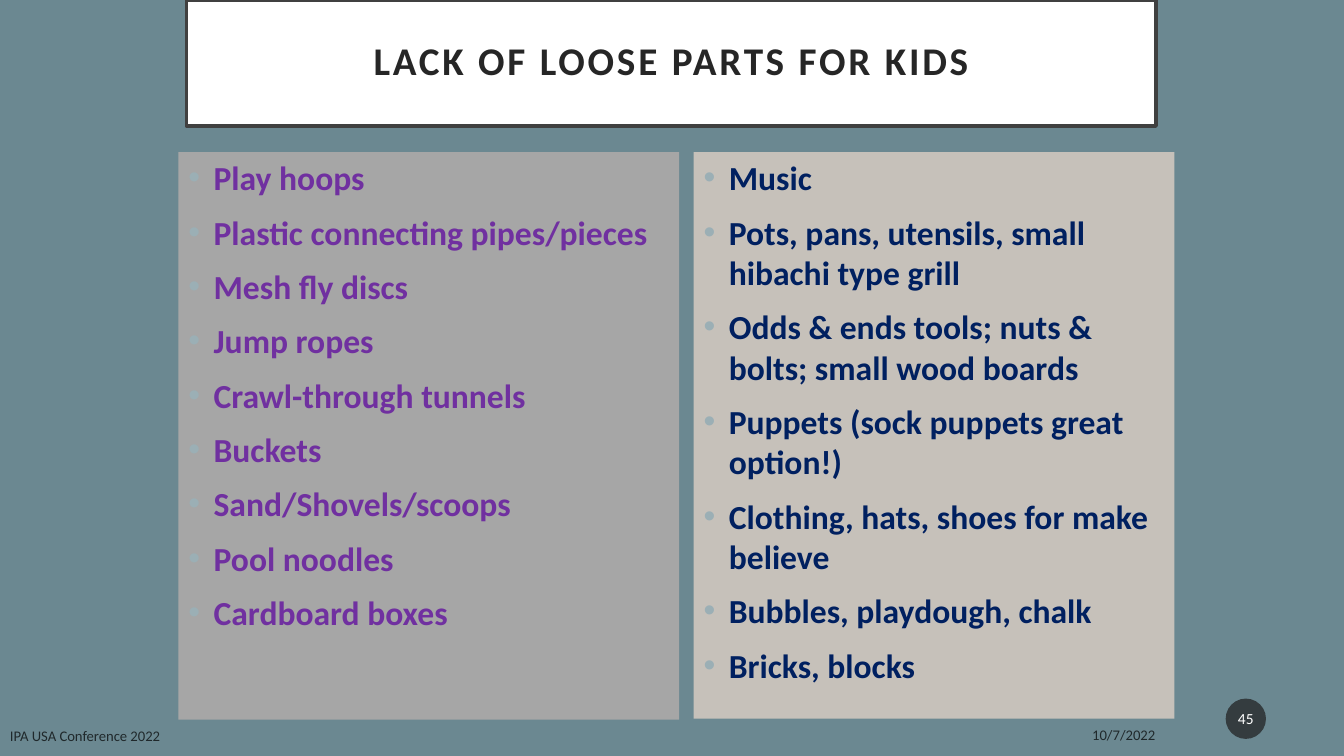
from dataclasses import dataclass

import lxml.etree
import pptx
import pptx.dml.color
import pptx.dml.fill
import pptx.enum.shapes
import pptx.enum.text
import pptx.oxml.ns
import pptx.shapes.base
import pptx.slide
import pptx.text.text
import pptx.util

ALIGN = pptx.enum.text.PP_ALIGN
MIDDLE = pptx.enum.text.MSO_ANCHOR.MIDDLE
qn = pptx.oxml.ns.qn


@dataclass(frozen=True)
class Box:
    left: float
    top: float
    width: float
    height: float

    def lengths(self) -> list[int]:
        return [pptx.util.Pt(v) for v in (self.left, self.top, self.width, self.height)]


@dataclass(frozen=True)
class ToyList:
    box: Box
    fill: str
    color: str
    items: tuple[str, ...]


@dataclass(frozen=True)
class FooterLabel:
    box: Box
    text: str
    alignment: ALIGN


TOY_LISTS = (
    ToyList(
        Box(127.4, 108.7, 357.8, 405.4), "A6A6A6", "7030A0",
        ("Play hoops", "Plastic connecting pipes/pieces", "Mesh fly discs",
         "Jump ropes", "Crawl-through tunnels", "Buckets",
         "Sand/Shovels/scoops", "Pool noodles", "Cardboard boxes"),
    ),
    ToyList(
        Box(495.4, 108.7, 343.4, 404.6), "C6C1BA", "002060",
        ("Music", "Pots, pans, utensils, small hibachi type grill",
         "Odds & ends tools; nuts & bolts; small wood boards",
         "Puppets (sock puppets great option!)",
         "Clothing, hats, shoes for make believe",
         "Bubbles, playdough, chalk", "Bricks, blocks"),
    ),
)

FOOTER_LABELS = (
    FooterLabel(Box(615.6, 511.9, 216.7, 25.2), "10/7/2022", ALIGN.RIGHT),
    FooterLabel(Box(0, 512.6, 464.4, 25.2), "IPA USA Conference 2022", ALIGN.LEFT),
)


def paint(fill: pptx.dml.fill.FillFormat, color: str) -> None:
    fill.solid()
    fill.fore_color.rgb = pptx.dml.color.RGBColor.from_string(color)


def set_opacity(element: lxml.etree._Element, percent: int) -> None:
    """Apply one opacity to every colour inside the element."""
    for color in element.iter(qn("a:srgbClr")):
        lxml.etree.SubElement(color, qn("a:alpha"), val=str(percent * 1000))


def place(shape: pptx.shapes.base.BaseShape, box: Box) -> None:
    shape.left, shape.top, shape.width, shape.height = box.lengths()


def style(paragraph: pptx.text.text._Paragraph, size: float, color: str,
          bold: bool = False) -> None:
    font = paragraph.font
    font.name = "Calibri"
    font.size = pptx.util.Pt(size)
    font.bold = bold
    paint(font.fill, color)


def add_bullet(paragraph: pptx.text.text._Paragraph) -> None:
    properties = paragraph._p.get_or_add_pPr()
    properties.set("marL", str(pptx.util.Pt(18)))
    properties.set("indent", str(pptx.util.Pt(-18)))
    bullet_color = lxml.etree.SubElement(properties, qn("a:buClr"))
    lxml.etree.SubElement(bullet_color, qn("a:srgbClr"), val="9BAFB5")
    lxml.etree.SubElement(properties, qn("a:buFont"), typeface="Arial")
    lxml.etree.SubElement(properties, qn("a:buChar"), char="•")


def fill_title(slide: pptx.slide.Slide) -> None:
    title = slide.shapes.title
    place(title, Box(133.2, 0, 692.6, 90))
    paint(title.fill, "FFFFFF")
    paint(title.line.fill, "404040")
    title.line.width = pptx.util.Pt(2.5)
    frame = title.text_frame
    frame.text = "LACK OF LOOSE PARTS FOR KIDS"
    frame.auto_size = pptx.enum.text.MSO_AUTO_SIZE.NONE
    frame.vertical_anchor = MIDDLE
    frame.margin_left = frame.margin_right = pptx.util.Pt(14.4)
    frame.margin_top = frame.margin_bottom = pptx.util.Pt(14.4)
    paragraph = frame.paragraphs[0]
    paragraph.alignment = ALIGN.CENTER
    paragraph.line_spacing = 0.9
    style(paragraph, 28, "262626", bold=True)
    paragraph._p.pPr.find(qn("a:defRPr")).set("spc", "200")


def fill_toy_list(shape: pptx.shapes.base.BaseShape, toys: ToyList) -> None:
    place(shape, toys.box)
    paint(shape.fill, toys.fill)
    frame = shape.text_frame
    frame.text = "\n".join(toys.items)
    frame.auto_size = pptx.enum.text.MSO_AUTO_SIZE.NONE
    for index, paragraph in enumerate(frame.paragraphs):
        paragraph.space_before = pptx.util.Pt(10 if index else 0)
        add_bullet(paragraph)
        style(paragraph, 24, toys.color, bold=True)


def add_footer_label(slide: pptx.slide.Slide, label: FooterLabel) -> None:
    text_box = slide.shapes.add_textbox(*label.box.lengths())
    frame = text_box.text_frame
    frame.word_wrap = True
    frame.vertical_anchor = MIDDLE
    frame.text = label.text
    paragraph = frame.paragraphs[0]
    paragraph.alignment = label.alignment
    style(paragraph, 10.5, "000000")
    set_opacity(paragraph._p, 70)


def add_page_number(slide: pptx.slide.Slide) -> None:
    badge = slide.shapes.add_shape(
        pptx.enum.shapes.MSO_SHAPE.OVAL, *Box(875.5, 499, 28.8, 28.8).lengths())
    badge.shadow.inherit = False
    paint(badge.fill, "1D1D1D")
    set_opacity(badge._element.spPr, 70)
    badge.line.fill.background()
    frame = badge.text_frame
    frame.margin_left = frame.margin_right = pptx.util.Pt(1.4)
    frame.vertical_anchor = MIDDLE
    frame.text = "45"
    paragraph = frame.paragraphs[0]
    paragraph.alignment = ALIGN.CENTER
    style(paragraph, 11, "FFFFFF")


def main() -> None:
    presentation = pptx.Presentation()
    presentation.slide_width = pptx.util.Pt(960)
    presentation.slide_height = pptx.util.Pt(540)
    two_content = presentation.slide_layouts.get_by_name("Two Content")
    slide = presentation.slides.add_slide(two_content)
    paint(slide.background.fill, "6B8891")
    fill_title(slide)
    for index, toys in enumerate(TOY_LISTS, start=1):
        fill_toy_list(slide.placeholders[index], toys)
    add_page_number(slide)
    for label in FOOTER_LABELS:
        add_footer_label(slide, label)
    presentation.save("out.pptx")


if __name__ == "__main__":
    main()
